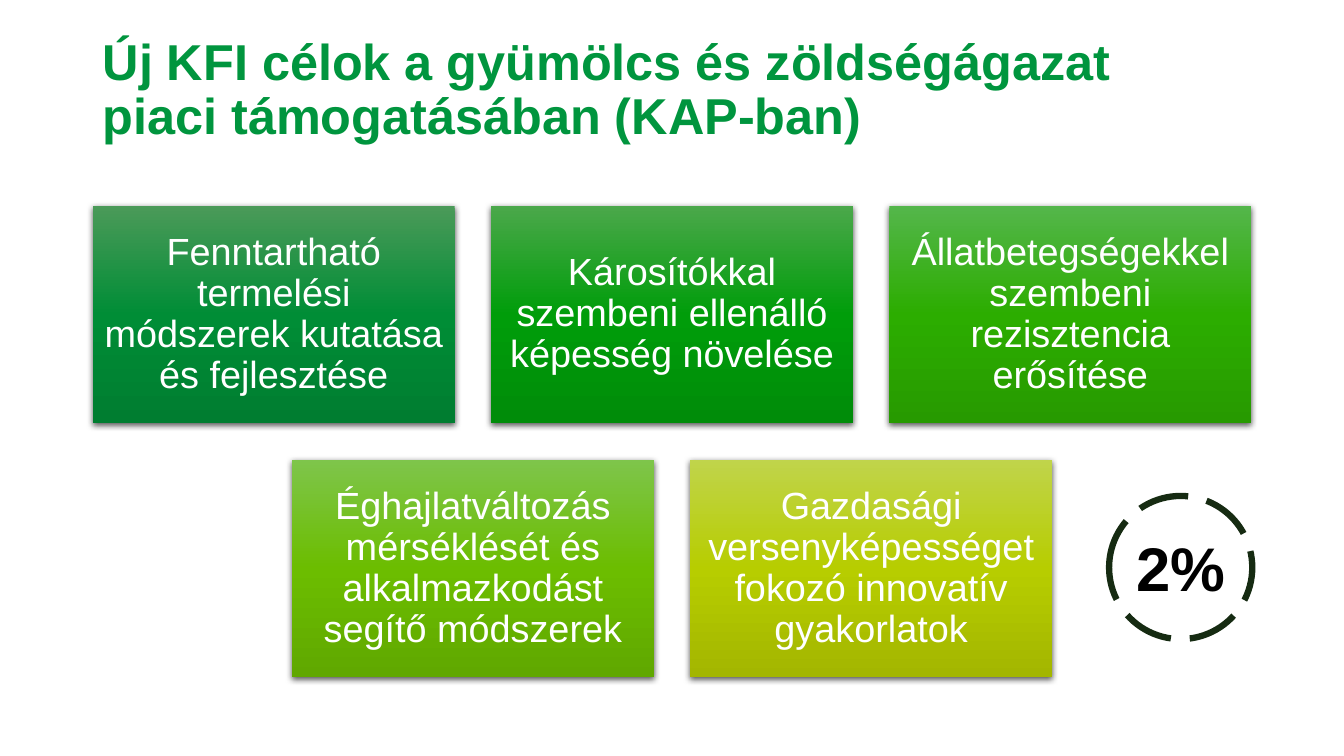
import pptx
import pptx.util
import pptx.dml.color
import pptx.enum.dml
import pptx.enum.shapes
import pptx.enum.text
import pptx.oxml
import pptx.oxml.ns

Inches, Pt = pptx.util.Inches, pptx.util.Pt
RGB = pptx.dml.color.RGBColor.from_string
ALIGN = pptx.enum.text.PP_ALIGN
SHAPE = pptx.enum.shapes.MSO_SHAPE
NS = pptx.oxml.ns.nsdecls("a")

THEME = {
    "font": "Arial",
    "title": {"size": 36, "color": "00953E", "bold": True},
    "goal": {"size": 27, "color": "FFFFFF", "bold": False},
    "share": {"size": 44, "color": "000000", "bold": True},
    "ring": "162B12",
}

SLIDE_W, SLIDE_H = 13.33, 7.5
COLUMNS = 3
CARD_W, CARD_H, GAP = 3.59, 2.16, 0.36
LEFT = (SLIDE_W - COLUMNS * CARD_W - (COLUMNS - 1) * GAP) / 2
TOP = 2.04

# Goals by row: text and gradient colours from top to bottom
GOAL_ROWS = [
    [
        ("Fenntartható termelési módszerek kutatása és fejlesztése",
         ("4B9A59", "008D36", "007D30")),
        ("Károsítókkal szembeni ellenálló képesség növelése",
         ("4BA84B", "009D0A", "008C09")),
        ("Állatbetegségekkel szembeni rezisztencia erősítése",
         ("54B64B", "2CAD00", "279A00")),
    ],
    [
        ("Éghajlatváltozás mérséklését és alkalmazkodást segítő módszerek",
         ("7EC54B", "6CBD00", "60A800")),
        ("Gazdasági versenyképességet fokozó innovatív gyakorlatok",
         ("C0D44B", "B7CD00", "A3B600")),
    ],
]


def write(holder, text, style, align, spacing, **frame_format):
    frame = holder.text_frame
    frame_values = {"word_wrap": True, **frame_format}
    for name, value in frame_values.items():
        setattr(frame, name, value)
    paragraph = frame.paragraphs[0]
    paragraph.alignment = align
    paragraph.line_spacing = spacing
    run = paragraph.add_run()
    run.text = text
    font_values = {"name": THEME["font"], "size": Pt(style["size"]), "bold": style["bold"]}
    for name, value in font_values.items():
        setattr(run.font, name, value)
    run.font.color.rgb = RGB(style["color"])


def paint_card(card, colors):
    stops = "".join(
        f'<a:gs pos="{step * 50000}"><a:srgbClr val="{color}"/></a:gs>'
        for step, color in enumerate(colors))
    card.line.fill.background()
    card.shadow.inherit = False
    properties = card.element.spPr
    properties.find(pptx.oxml.ns.qn("a:prstGeom")).addnext(pptx.oxml.parse_xml(
        f'<a:gradFill {NS} rotWithShape="1"><a:gsLst>{stops}</a:gsLst>'
        '<a:lin ang="5400000" scaled="0"/></a:gradFill>'))
    properties.find(pptx.oxml.ns.qn("a:effectLst")).append(pptx.oxml.parse_xml(
        f'<a:outerShdw {NS} blurRad="{Pt(4.5)}" dist="{Pt(1.5)}" dir="5400000" rotWithShape="0">'
        '<a:srgbClr val="000000"><a:alpha val="63000"/></a:srgbClr></a:outerShdw>'))


deck = pptx.Presentation()
deck.slide_width, deck.slide_height = Inches(SLIDE_W), Inches(SLIDE_H)
slide = deck.slides.add_slide(deck.slide_layouts[6])
MIDDLE = pptx.enum.text.MSO_ANCHOR.MIDDLE

# Title
title = slide.shapes.add_textbox(Inches(LEFT), Inches(0.18), Inches(10.73), Inches(1.45))
write(title, "Új KFI célok a gyümölcs és zöldségágazat piaci támogatásában (KAP-ban)",
      THEME["title"], ALIGN.LEFT, 0.9, vertical_anchor=MIDDLE)

# Share of support in a dashed ring
ring = slide.shapes.add_shape(SHAPE.OVAL, Inches(11), Inches(4.92), Inches(1.42), Inches(1.42))
ring.shadow.inherit = False
ring.fill.background()
ring.line.color.rgb = RGB(THEME["ring"])
ring.line.width = Pt(4.5)
ring.line.dash_style = pptx.enum.dml.MSO_LINE.LONG_DASH
share = slide.shapes.add_textbox(Inches(11.05), Inches(5.21), Inches(1.32), Inches(0.84))
write(share, "2%", THEME["share"], ALIGN.CENTER, 1.0)

# Goal cards, each row centred on the grid
inset = Inches(0.11)
for row, goals in enumerate(GOAL_ROWS):
    indent = (COLUMNS - len(goals)) / 2
    for column, (goal, colors) in enumerate(goals):
        card = slide.shapes.add_shape(
            SHAPE.RECTANGLE,
            Inches(LEFT + (column + indent) * (CARD_W + GAP)),
            Inches(TOP + row * (CARD_H + GAP)),
            Inches(CARD_W), Inches(CARD_H))
        paint_card(card, colors)
        write(card, goal, THEME["goal"], ALIGN.CENTER, 0.9, vertical_anchor=MIDDLE,
              margin_left=inset, margin_right=inset, margin_top=inset, margin_bottom=inset)

deck.save("out.pptx")
